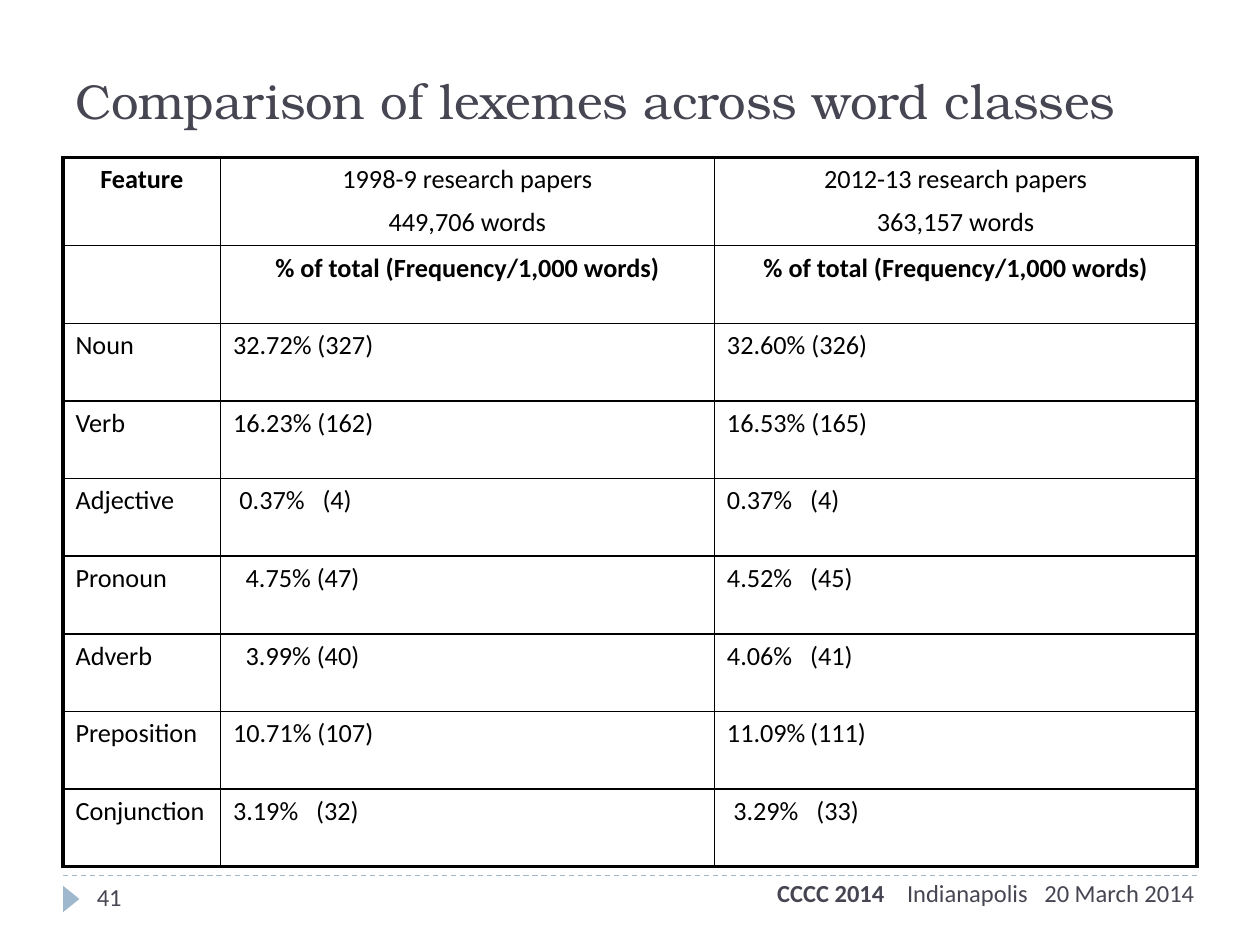
from dataclasses import dataclass

from lxml.etree import SubElement
from pptx import Presentation
from pptx.dml.color import RGBColor
from pptx.enum.dml import MSO_LINE
from pptx.enum.shapes import MSO_CONNECTOR, MSO_SHAPE
from pptx.enum.text import MSO_ANCHOR, PP_ALIGN
from pptx.oxml import parse_xml
from pptx.oxml.ns import nsdecls, qn
from pptx.util import Inches, Pt

COLORS = {"ink": "464653", "accent": "9FB8CD", "table": "000000"}
BODY_FONT = "Calibri"
TITLE_FONT = "TeX Gyre Bonum"
SPACE = 0.05
FREQUENCY_STOP = 0.66


@dataclass
class Share:
    """Percentage and frequency; tabbed aligns the frequency on a tab stop."""
    percent: str
    frequency: int
    tabbed: bool = False
    indent: float = 0

    def text(self) -> str:
        gap = "\t" if self.tabbed else " "
        return f"{self.percent}%{gap}({self.frequency})"


@dataclass
class WordClass:
    name: str
    early: Share
    late: Share


WORD_CLASSES = [
    WordClass("Noun", Share("32.72", 327), Share("32.60", 326)),
    WordClass("Verb", Share("16.23", 162), Share("16.53", 165)),
    WordClass("Adjective", Share("0.37", 4, True, SPACE), Share("0.37", 4, True)),
    WordClass("Pronoun", Share("4.75", 47, indent=2 * SPACE), Share("4.52", 45, True)),
    WordClass("Adverb", Share("3.99", 40, indent=2 * SPACE), Share("4.06", 41, True)),
    WordClass("Preposition", Share("10.71", 107), Share("11.09", 111, True)),
    WordClass("Conjunction", Share("3.19", 32, True), Share("3.29", 33, True, SPACE)),
]
HEADINGS = [
    ["Feature"],
    ["1998-9 research papers", "449,706 words"],
    ["2012-13 research papers", "363,157 words"],
]
MEASURE = "% of total (Frequency/1,000 words)"
COLUMN_WIDTHS = [1.25, 3.92, 3.83]
HEADING_HEIGHT = 0.7
REMAINING_HEIGHT = 4.93


def rgb(name: str) -> RGBColor:
    return RGBColor.from_string(COLORS[name])


def add_run(paragraph, text: str, size: float, color: str,
            font: str = BODY_FONT, bold: bool = False) -> None:
    run = paragraph.add_run()
    run.text = text
    run.font.size = Pt(size)
    run.font.name = font
    run.font.bold = bold
    run.font.color.rgb = rgb(color)


def add_tab_stops(paragraph, *stops: float) -> None:
    tabs = SubElement(paragraph._p.get_or_add_pPr(), qn("a:tabLst"))
    for stop in stops:
        SubElement(tabs, qn("a:tab"), pos=str(Inches(stop)), algn="l")


def add_text_box(slide, left: float, top: float, width: float, height: float):
    frame = slide.shapes.add_textbox(
        Inches(left), Inches(top), Inches(width), Inches(height)).text_frame
    frame.word_wrap = True
    return frame


def add_rule(slide, y: float) -> None:
    rule = slide.shapes.add_connector(
        MSO_CONNECTOR.STRAIGHT, Inches(0.5), Inches(y), Inches(9.5), Inches(y))
    rule.line.color.rgb = rgb("accent")
    rule.line.width = Pt(0.75)
    rule.line.dash_style = MSO_LINE.DASH
    SubElement(rule._element.spPr, qn("a:effectLst"))


def set_borders(cell, outer: dict[str, bool]) -> None:
    """Draw thick lines on the table's outer sides and thin ones inside."""
    properties = cell._tc.get_or_add_tcPr()
    for position, (side, is_outer) in enumerate(outer.items()):
        width = Pt(2.25 if is_outer else 1)
        properties.insert(position, parse_xml(
            f'<a:ln{side} {nsdecls("a")} w="{width}"><a:solidFill>'
            f'<a:srgbClr val="{COLORS["table"]}"/></a:solidFill></a:ln{side}>'))


def write_cell(cell, lines: list[str], centered: bool = False, bold: bool = False):
    frame = cell.text_frame
    for index, line in enumerate(lines):
        paragraph = frame.add_paragraph() if index else frame.paragraphs[0]
        paragraph.space_before = Pt(6)
        paragraph.alignment = PP_ALIGN.CENTER if centered else PP_ALIGN.LEFT
        add_run(paragraph, line, 15, "table", bold=bold)


def write_share(cell, share: Share) -> None:
    write_cell(cell, [share.text()])
    paragraph = cell.text_frame.paragraphs[0]
    if share.indent:
        paragraph._p.get_or_add_pPr().set("marL", str(Inches(share.indent)))
    if share.tabbed:
        add_tab_stops(paragraph, FREQUENCY_STOP)


def add_comparison_table(slide) -> None:
    row_count, column_count = len(WORD_CLASSES) + 2, len(COLUMN_WIDTHS)
    table = slide.shapes.add_table(
        row_count, column_count, Inches(0.5), Inches(1.25), Inches(9),
        Inches(HEADING_HEIGHT + REMAINING_HEIGHT)).table
    table.first_row = table.horz_banding = False
    for column, width in zip(table.columns, COLUMN_WIDTHS):
        column.width = Inches(width)
    for index, row in enumerate(table.rows):
        row.height = Inches(REMAINING_HEIGHT / (row_count - 1) if index else HEADING_HEIGHT)
        for place, cell in enumerate(row.cells):
            cell.fill.background()
            set_borders(cell, {"L": place == 0, "R": place == column_count - 1,
                               "T": index == 0, "B": index == row_count - 1})

    for place, lines in enumerate(HEADINGS):
        write_cell(table.cell(0, place), lines, centered=True, bold=place == 0)
    for place in (1, 2):
        write_cell(table.cell(1, place), [MEASURE], centered=True, bold=True)
    for index, word_class in enumerate(WORD_CLASSES, start=2):
        write_cell(table.cell(index, 0), [word_class.name])
        write_share(table.cell(index, 1), word_class.early)
        write_share(table.cell(index, 2), word_class.late)


def add_page_number(slide) -> None:
    marker = slide.shapes.add_shape(
        MSO_SHAPE.ISOSCELES_TRIANGLE, Inches(0.46), Inches(7.07), Inches(0.21), Inches(0.13))
    marker.rotation = 90
    marker.shadow.inherit = False
    marker.fill.solid()
    marker.fill.fore_color.rgb = rgb("accent")
    marker.line.fill.background()
    number = add_text_box(slide, 0.67, 6.95, 2.17, 0.4)
    add_run(number.paragraphs[0], "41", 14, "ink")


def add_title(slide) -> None:
    title = add_text_box(slide, 0.5, 0.5, 9, 0.58)
    title.vertical_anchor = MSO_ANCHOR.MIDDLE
    add_run(title.paragraphs[0], "Comparison of lexemes across word classes",
            28, "ink", TITLE_FONT)


def add_event(slide) -> None:
    event = add_text_box(slide, 6.07, 6.92, 3.51, 0.4).paragraphs[0]
    add_tab_stops(event, 1.03, 2.12)
    add_run(event, "CCCC 2014", 14, "ink", bold=True)
    add_run(event, "\tIndianapolis\t20 March 2014", 14, "ink")


def main() -> None:
    presentation = Presentation()
    presentation.slide_width, presentation.slide_height = Inches(10), Inches(7.5)
    slide = presentation.slides.add_slide(presentation.slide_layouts[6])
    for y in (6.95, 1.25):
        add_rule(slide, y)
    add_page_number(slide)
    add_comparison_table(slide)
    add_title(slide)
    add_event(slide)
    presentation.save("out.pptx")


if __name__ == "__main__":
    main()
